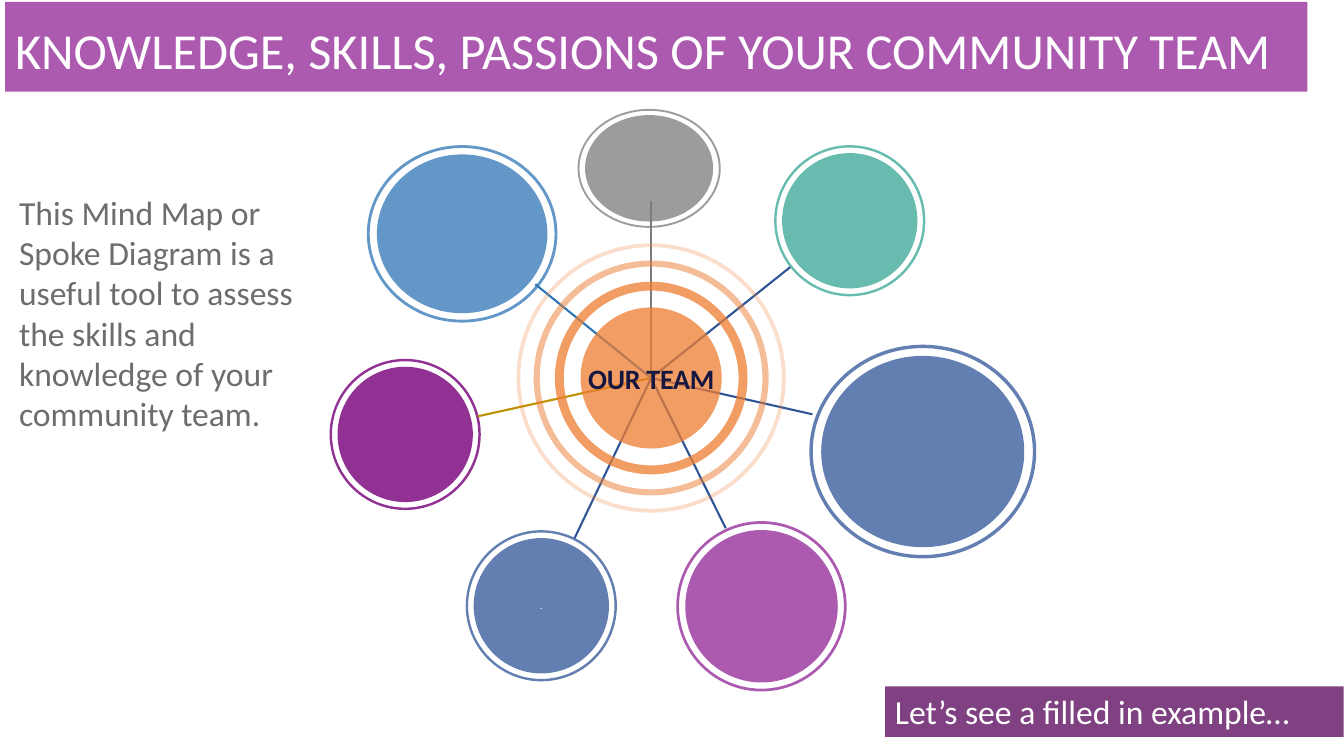
"""Builds a spoke diagram slide about the skills of a community team."""
from lxml.etree import SubElement
from pptx import Presentation
from pptx.dml.color import RGBColor
from pptx.enum.shapes import MSO_CONNECTOR, MSO_SHAPE as SHAPE
from pptx.enum.text import MSO_ANCHOR as ANCHOR, PP_ALIGN as ALIGN
from pptx.oxml.ns import qn
from pptx.util import Inches, Pt

GREY = RGBColor(0x7C, 0x7C, 0x7C)
TEAL = RGBColor(0x68, 0xBB, 0xAF)
NAVY = RGBColor(0x2F, 0x55, 0x97)
ORCHID = RGBColor(0xAB, 0x5A, 0xB0)
PURPLE = RGBColor(0x90, 0x31, 0x93)
PLUM = RGBColor(0x7F, 0x41, 0x82)
BLUE = RGBColor(0x2E, 0x75, 0xB6)
GOLD = RGBColor(0xBF, 0x90, 0x00)
ORANGE = RGBColor(0xED, 0x7D, 0x31)
INK = RGBColor(0x16, 0x17, 0x41)
SLATE = RGBColor(0x6D, 0x6E, 0x6C)
WHITE = RGBColor(0xFF, 0xFF, 0xFF)

deck = Presentation()
deck.slide_width, deck.slide_height = Inches(13.333), Inches(7.5)
slide = deck.slides.add_slide(deck.slide_layouts[6])
shapes = slide.shapes
COL, ROW = deck.slide_width / 100, deck.slide_height / 100
ASPECT = deck.slide_width / deck.slide_height


def paint(kind, x, y, w, h, colour, opacity=100, band=None):
    """Add a filled shape centred on x, y, in percent of the slide."""
    item = shapes.add_shape(kind, int((x - w / 2) * COL), int((y - h / 2) * ROW),
                            int(w * COL), int(h * ROW))
    item.shadow.inherit = False
    item.line.fill.background()
    item.fill.solid()
    item.fill.fore_color.rgb = colour
    if opacity < 100:
        tint = item.fill._xPr.find(qn("a:solidFill"))[0]
        SubElement(tint, qn("a:alpha"), val=str(opacity * 1000))
    if band:
        item.adjustments[0] = band
    return item


def write(item, text, size, colour, bold=False, align=ALIGN.LEFT,
          anchor=ANCHOR.TOP, wrap=True, leading=1.0, margin=None, tracking=0):
    """Put formatted text into a shape or text box."""
    frame = item.text_frame
    frame.word_wrap = wrap
    frame.vertical_anchor = anchor
    if margin is not None:
        frame.margin_left = frame.margin_right = margin
        frame.margin_top = frame.margin_bottom = margin
    line = frame.paragraphs[0]
    line.alignment, line.line_spacing = align, leading
    run = line.add_run()
    run.text = text
    run.font.name, run.font.size, run.font.bold = "Calibri", Pt(size), bold
    run.font.color.rgb = colour
    if tracking:
        run._r.get_or_add_rPr().set("spc", str(tracking))


HUB_X, HUB_Y = 48.45, 50
DISC_SHARE = 0.895
bubbles = [
    (48.3, 22.27, 10.65, 15.73, GREY, 75, ""),
    (63.23, 29.2, 11.25, 20, TEAL, 100, ""),
    (68.66, 59.73, 16.88, 28.27, NAVY, 75, ""),
    (56.66, 80.2, 12.68, 22.53, ORCHID, 100, ""),
    (40.28, 80.13, 11.25, 20, NAVY, 75, "."),
    (30.15, 57.47, 11.25, 20, PURPLE, 100, ""),
    (34.39, 30.93, 14.18, 23.47, BLUE, 75, ""),
]
for x, y, w, h, colour, opacity, label in bubbles:
    disc = paint(SHAPE.OVAL, x, y, w * DISC_SHARE, h * DISC_SHARE, colour, opacity)
    if label:
        write(disc, label, 8, WHITE, align=ALIGN.CENTER, anchor=ANCHOR.MIDDLE,
              leading=0.95, margin=0, tracking=-20)
    paint(SHAPE.DONUT, x, y, w, h, colour, opacity, band=0.016)

spokes = [
    (48.45, 26.53, GREY), (58.8, 35.33, NAVY), (39.83, 37.6, BLUE),
    (35.55, 55.07, GOLD), (60.45, 54.8, NAVY), (54, 69.87, NAVY),
    (42.75, 71.2, NAVY),
]
for x, y, colour in spokes:
    spoke = shapes.add_connector(MSO_CONNECTOR.STRAIGHT, int(x * COL), int(y * ROW),
                                 int(HUB_X * COL), int(HUB_Y * ROW))
    spoke.line.color.rgb = colour
    spoke.line.width = Pt(1.5)
    SubElement(spoke._element.spPr, qn("a:effectLst"))

hub_layers = [
    (SHAPE.OVAL, 10.5, 75, None), (SHAPE.DONUT, 14.33, 75, 0.046),
    (SHAPE.DONUT, 17.48, 50, 0.026), (SHAPE.DONUT, 20.03, 25, 0.014),
]
for kind, width, opacity, band in hub_layers:
    paint(kind, HUB_X, HUB_Y, width, width * ASPECT, ORANGE, opacity, band)

team = shapes.add_textbox(int(42.98 * COL), int(47.07 * ROW), int(10.95 * COL), int(5.87 * ROW))
write(team, "OUR TEAM", 20, INK, bold=True, align=ALIGN.CENTER,
      anchor=ANCHOR.MIDDLE, wrap=False, tracking=-20)

intro = shapes.add_textbox(int(0.68 * COL), int(24.67 * ROW), int(22.58 * COL), int(39.07 * ROW))
write(intro, "This Mind Map or Spoke Diagram is a useful tool to assess the skills "
      "and knowledge of your community team.", 24, SLATE)

title = paint(SHAPE.RECTANGLE, 48.83, 6.2, 96.9, 11.87, ORCHID)
write(title, "KNOWLEDGE, SKILLS, PASSIONS OF YOUR COMMUNITY TEAM", 36, WHITE, leading=1.2)

teaser = paint(SHAPE.RECTANGLE, 82.92, 94.13, 34.13, 6.67, PLUM)
write(teaser, "Let’s see a filled in example…", 24, WHITE)

deck.save("out.pptx")
